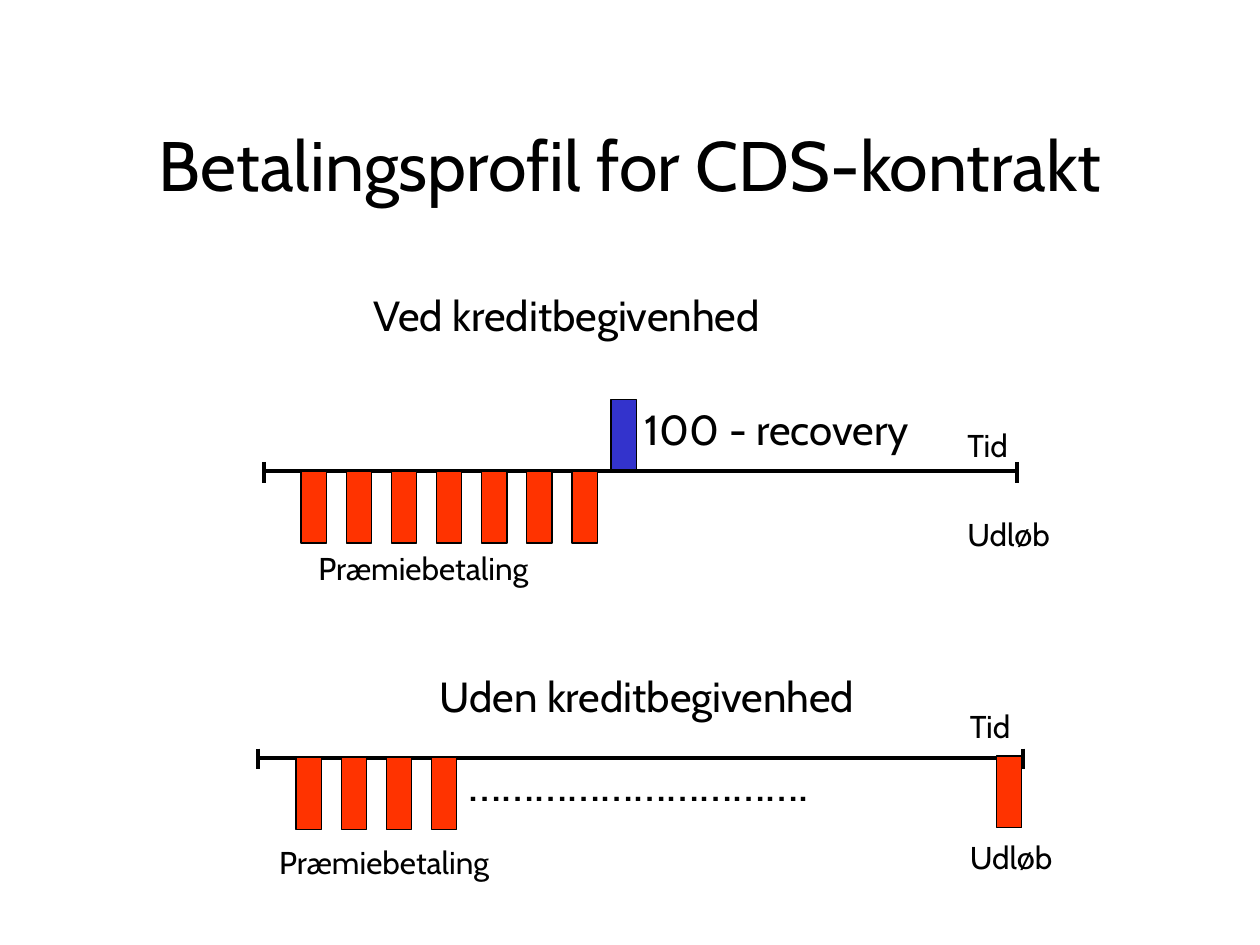
from lxml import etree
from pptx import Presentation
from pptx.dml.color import RGBColor
from pptx.enum.shapes import MSO_CONNECTOR, MSO_SHAPE
from pptx.enum.text import MSO_ANCHOR, MSO_AUTO_SIZE, PP_ALIGN
from pptx.oxml.ns import qn
from pptx.util import Cm, Pt

STRAIGHT = MSO_CONNECTOR.STRAIGHT
RECTANGLE = MSO_SHAPE.RECTANGLE
MIDDLE = MSO_ANCHOR.MIDDLE
CENTER = PP_ALIGN.CENTER
GROW = MSO_AUTO_SIZE.SHAPE_TO_FIT_TEXT

FONT = "Cabin"
BLACK, PREMIUM_RED, PAYOUT_BLUE = "000000", "FF3300", "3333CC"
BAR_WIDTH, BAR_HEIGHT, BAR_PITCH = 0.51, 1.45, 0.91
TICK_TOP, TICK_LENGTH = 0.19, 0.42


def color(hex_string):
    return RGBColor.from_string(hex_string)


def style_paragraph(paragraph, text, size):
    paragraph.text = text
    paragraph.font.name = FONT
    paragraph.font.size = Pt(size)
    paragraph.font.color.rgb = color(BLACK)


def add_text(slide, text, left, top, width, height, size):
    """Add a text box that grows with its unwrapped text."""
    shape = slide.shapes.add_textbox(Cm(left), Cm(top), Cm(width), Cm(height))
    frame = shape.text_frame
    frame.word_wrap = False
    frame.auto_size = GROW
    style_paragraph(frame.paragraphs[0], text, size)
    return frame


def add_title(slide, text):
    shape = slide.shapes.add_textbox(Cm(1.9), Cm(1.7), Cm(21.6), Cm(3.18))
    frame = shape.text_frame
    frame.word_wrap = True
    frame.vertical_anchor = MIDDLE
    style_paragraph(frame.paragraphs[0], text, 40)
    frame.paragraphs[0].alignment = CENTER


def add_end_labels(slide, left, top, height, gap):
    """Add the time label above the axis end and the expiry label below it."""
    frame = add_text(slide, "Tid", left, top, 2.18, height, 18)
    expiry = frame.add_paragraph()
    style_paragraph(expiry, "Udløb", 18)
    expiry.space_before = Pt(gap)


def add_line(slide, x1, y1, x2, y2):
    line = slide.shapes.add_connector(STRAIGHT, Cm(x1), Cm(y1), Cm(x2), Cm(y2))
    line.line.color.rgb = color(BLACK)
    line.line.width = Pt(2)
    etree.SubElement(line._element.spPr, qn("a:effectLst"))


def add_time_axis(slide, left, right, y):
    add_line(slide, left, y, right, y)
    for x in (left, right):
        add_line(slide, x, y - TICK_TOP, x, y - TICK_TOP + TICK_LENGTH)


def add_bar(slide, left, top, fill):
    bar = slide.shapes.add_shape(
        RECTANGLE, Cm(left), Cm(top), Cm(BAR_WIDTH), Cm(BAR_HEIGHT))
    bar.shadow.inherit = False
    bar.fill.solid()
    bar.fill.fore_color.rgb = color(fill)
    bar.line.color.rgb = color(BLACK)
    bar.line.width = Pt(0.75)


def add_premiums(slide, count, left, top):
    for index in range(count):
        add_bar(slide, left + index * BAR_PITCH, top, PREMIUM_RED)


def add_credit_event_profile(slide):
    add_text(slide, "Ved kreditbegivenhed", 7.29, 5.72, 9.14, 1.28, 24)
    add_bar(slide, 12.32, 8.05, PAYOUT_BLUE)
    add_time_axis(slide, 5.32, 20.5, 9.5)
    add_premiums(slide, 7, 6.07, 9.5)
    add_text(slide, "100 - recovery", 12.75, 8, 6.02, 1.28, 24)
    add_text(slide, "Præmiebetaling", 6.17, 10.95, 5.05, 1.02, 18)
    add_end_labels(slide, 19.25, 8.46, 2.87, 29.5)


def add_no_event_profile(slide):
    add_text(slide, "Uden kreditbegivenhed", 8.61, 13.39, 9.4, 1.28, 24)
    add_time_axis(slide, 5.2, 20.62, 15.28)
    add_premiums(slide, 4, 5.97, 15.27)
    add_bar(slide, 20.09, 15.24, PREMIUM_RED)
    add_text(slide, "………………………….", 9.19, 15.04, 8.23, 1.45, 28)
    add_text(slide, "Præmiebetaling", 5.38, 16.87, 5.05, 1.02, 18)
    add_end_labels(slide, 19.3, 14.12, 3.78, 53.5)


def main():
    presentation = Presentation()
    presentation.slide_width = Cm(25.4)
    presentation.slide_height = Cm(19.05)
    slide = presentation.slides.add_slide(presentation.slide_layouts[6])
    add_title(slide, "Betalingsprofil for CDS-kontrakt")
    add_credit_event_profile(slide)
    add_no_event_profile(slide)
    presentation.save("out.pptx")


if __name__ == "__main__":
    main()
